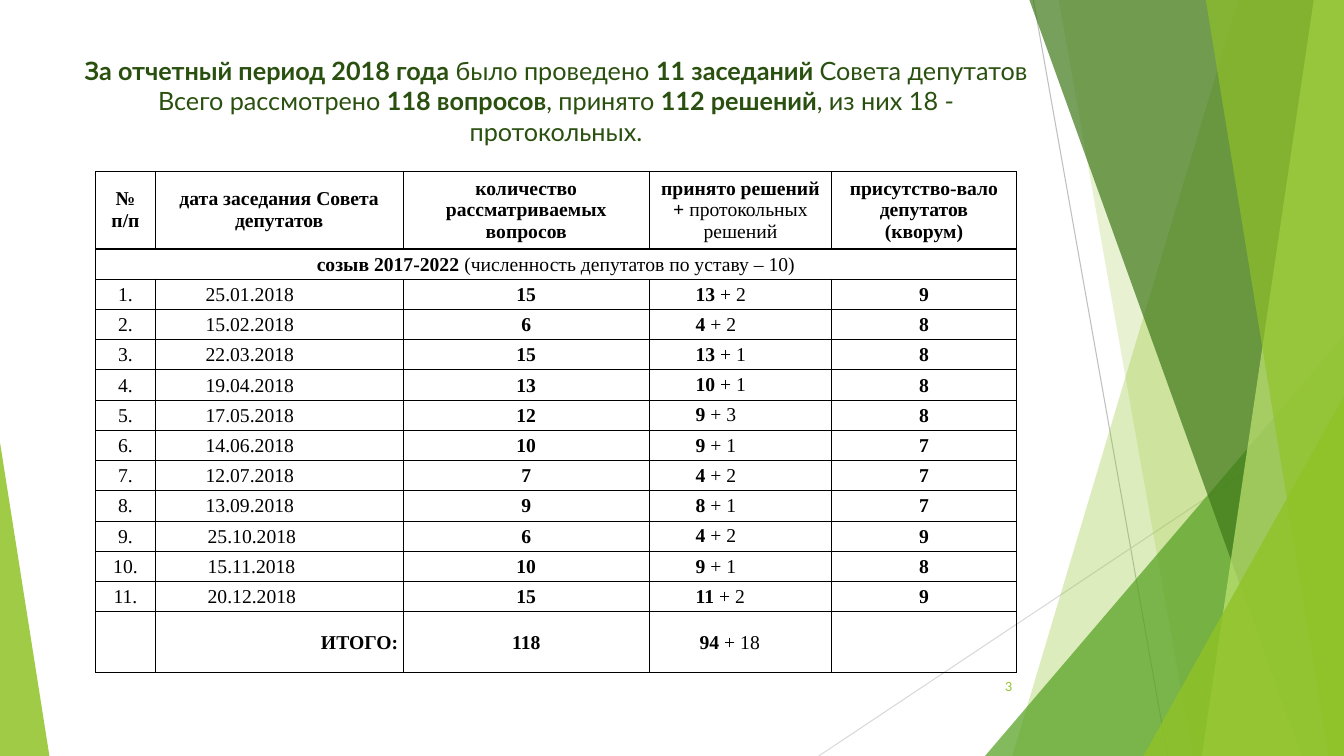
from pptx import Presentation
from pptx.dml.color import RGBColor as RGB
from pptx.enum.shapes import MSO_CONNECTOR as CONN, MSO_SHAPE as SHAPE
from pptx.enum.text import MSO_ANCHOR as ANCHOR, PP_ALIGN as AL
from pptx.oxml.ns import qn
from pptx.util import Inches, Pt
from lxml.etree import SubElement

COLORS = {
    "lime": "90C226", "pale": "C0E474", "green": "54A021", "forest": "3F7819",
    "title": "2A5010", "black": "000000", "grey": "BFBFBF", "light": "D9D9D9",
}
SLIDE_W, SLIDE_H = 13.33, 7.5
COL_WIDTHS = [0.59, 2.46, 2.44, 1.81, 1.83]
ROW_HEIGHTS = [0.77] + [0.3] * 12 + [0.6]
HEADERS = [
    "*№\nп/п*", "*дата заседания Совета депутатов*",
    "*количество рассматриваемых вопросов*",
    "*принято решений + *протокольных решений",
    "*присутство-вало депутатов\n(кворум)*",
]
CONVOCATION = "*созыв 2017-2022 *(численность депутатов по уставу – 10)"
MEETINGS = [
    ("25.01.2018", 15, 13, 2, 9), ("15.02.2018", 6, 4, 2, 8),
    ("22.03.2018", 15, 13, 1, 8), ("19.04.2018", 13, 10, 1, 8),
    ("17.05.2018", 12, 9, 3, 8), ("14.06.2018", 10, 9, 1, 7),
    ("12.07.2018", 7, 4, 2, 7), ("13.09.2018", 9, 8, 1, 7),
    ("25.10.2018", 6, 4, 2, 9), ("15.11.2018", 10, 9, 1, 8),
    ("20.12.2018", 15, 11, 2, 9),
]
TITLE = (
    "*За отчетный период 2018 года* было проведено *11 заседаний *Совета депутатов\v"
    "Всего рассмотрено *118 вопросов*, принято *112 решений*, из них 18 - протокольных."
)


class Deck:
    head_font = "Lato"
    table_font = "Times New Roman"

    def __init__(self, prs):
        self.slide = prs.slides.add_slide(prs.slide_layouts[6])
        self.shapes = self.slide.shapes

    def color(self, name):
        return RGB.from_string(COLORS[name])

    def paint(self, sp, color, alpha):
        sp.shadow.inherit = False
        sp.line.fill.background()
        sp.fill.solid()
        sp.fill.fore_color.rgb = self.color(color)
        clr = sp._element.spPr.find(qn("a:solidFill"))[0]
        SubElement(clr, qn("a:alpha"), val=str(alpha * 1000))

    def line(self, x1, y1, x2, y2, color):
        sp = self.shapes.add_connector(
            CONN.STRAIGHT, Inches(x1), Inches(y1), Inches(x2), Inches(y2))
        sp.line.color.rgb = self.color(color)
        sp.line.width = Pt(0.75)
        SubElement(sp._element.spPr, qn("a:effectLst"))

    def band(self, top_left, bottom_left, color, alpha):
        pts = [(SLIDE_W, 0), (SLIDE_W, SLIDE_H), (bottom_left, SLIDE_H)]
        fb = self.shapes.build_freeform(Inches(top_left), 0)
        fb.add_line_segments([(Inches(x), Inches(y)) for x, y in pts])
        self.paint(fb.convert_to_shape(), color, alpha)

    def triangle(self, x, y, w, apex, color, alpha):
        sp = self.shapes.add_shape(
            SHAPE.ISOSCELES_TRIANGLE, Inches(x), Inches(y), Inches(w), Inches(SLIDE_H - y))
        sp.adjustments[0] = apex
        self.paint(sp, color, alpha)

    def fill_text(self, tf, text, font, size, color, align, indent=0, spacing=None):
        bold = False
        for i, line in enumerate(text.split("\n")):
            p = tf.paragraphs[0] if i == 0 else tf.add_paragraph()
            p.alignment = align
            p.font.name, p.font.size = font, Pt(size)
            p.font.color.rgb = self.color(color)
            if spacing:
                p.line_spacing = Pt(spacing)
            if indent:
                p._p.get_or_add_pPr().set("marL", str(Inches(indent)))
            for j, part in enumerate(line.split("*")):
                if j:
                    bold = not bold
                for k, piece in enumerate(part.split("\v")):
                    if k:
                        p.add_line_break()
                    if piece:
                        r = p.add_run()
                        r.text = piece
                        r.font.bold = bold

    def text(self, x, y, w, h, text, size, color, align, anchor):
        tf = self.shapes.add_textbox(Inches(x), Inches(y), Inches(w), Inches(h)).text_frame
        tf.word_wrap = True
        tf.vertical_anchor = anchor
        self.fill_text(tf, text, self.head_font, size, color, align)

    def cell(self, cell, text, align=AL.CENTER, indent=0, spacing=16):
        cell.margin_left = cell.margin_right = Inches(0.05)
        cell.margin_top = cell.margin_bottom = 0
        cell.vertical_anchor = ANCHOR.MIDDLE
        self.fill_text(cell.text_frame, text, self.table_font, 14, "black", align, indent, spacing)
        tcPr = cell._tc.get_or_add_tcPr()
        for side in ("lnL", "lnR", "lnT", "lnB"):
            ln = SubElement(tcPr, qn(f"a:{side}"), w=str(Pt(1)))
            fill = SubElement(ln, qn("a:solidFill"))
            SubElement(fill, qn("a:srgbClr"), val=COLORS["black"])
        cell.fill.background()

    def table(self, x, y, widths, heights):
        table = self.shapes.add_table(
            len(heights), len(widths), Inches(x), Inches(y),
            Inches(sum(widths)), Inches(sum(heights))).table
        table.first_row = table.horz_banding = False
        for col, w in zip(table.columns, widths):
            col.width = Inches(w)
        for row, h in zip(table.rows, heights):
            row.height = Inches(h)
        return table


def add_background(deck):
    deck.line(10.25, 0, 11.58, SLIDE_H, "grey")
    deck.line(SLIDE_W, 4.03, 8.12, SLIDE_H, "light")
    deck.band(12.28, 10.04, "lime", 30)
    deck.band(10.5, 11.83, "lime", 20)
    deck.triangle(9.77, 3.33, 3.56, 1, "green", 72)
    deck.band(10.21, 12.91, "forest", 70)
    deck.band(13.03, 11.92, "pale", 70)
    deck.band(11.96, 13.18, "lime", 65)
    deck.triangle(11.34, 3.93, 1.99, 1, "lime", 80)
    deck.triangle(0, 4.39, 0.49, 0, "lime", 85)


def add_meetings(deck):
    table = deck.table(0.95, 1.7, COL_WIDTHS, ROW_HEIGHTS)
    for c, header in enumerate(HEADERS):
        deck.cell(table.cell(0, c), header, spacing=None)
    table.cell(1, 0).merge(table.cell(1, 4))
    for c in range(5):
        deck.cell(table.cell(1, c), "" if c else CONVOCATION)
    for n, (date, issues, passed, protocol, present) in enumerate(MEETINGS, 1):
        row = table.rows[n + 1].cells
        deck.cell(row[0], f"{n}.")
        deck.cell(row[1], date, AL.LEFT, 0.45 if n < 9 else 0.47)
        deck.cell(row[2], f"*{issues}*")
        deck.cell(row[3], f"*{passed} *+ {protocol}", AL.LEFT, 0.41, 16 if n < 3 else None)
        deck.cell(row[4], f"*{present}*")
    total = table.rows[len(ROW_HEIGHTS) - 1].cells
    issues, passed, protocol = (sum(m[i] for m in MEETINGS) for i in (1, 2, 3))
    deck.cell(total[0], "")
    deck.cell(total[1], "*ИТОГО:*", AL.RIGHT, 0.45)
    deck.cell(total[2], f"*{issues}*")
    deck.cell(total[3], f"*{passed} *+ {protocol}", AL.LEFT, 0.45)
    deck.cell(total[4], "")


def main():
    prs = Presentation()
    prs.slide_width, prs.slide_height = Inches(SLIDE_W), Inches(SLIDE_H)
    deck = Deck(prs)
    add_background(deck)
    deck.text(0.63, 0.5, 9.77, 1.3, TITLE, 18, "title", AL.CENTER, ANCHOR.TOP)
    add_meetings(deck)
    deck.text(9.39, 6.61, 0.75, 0.4, "3", 9, "lime", AL.RIGHT, ANCHOR.MIDDLE)
    prs.save("out.pptx")


if __name__ == "__main__":
    main()
